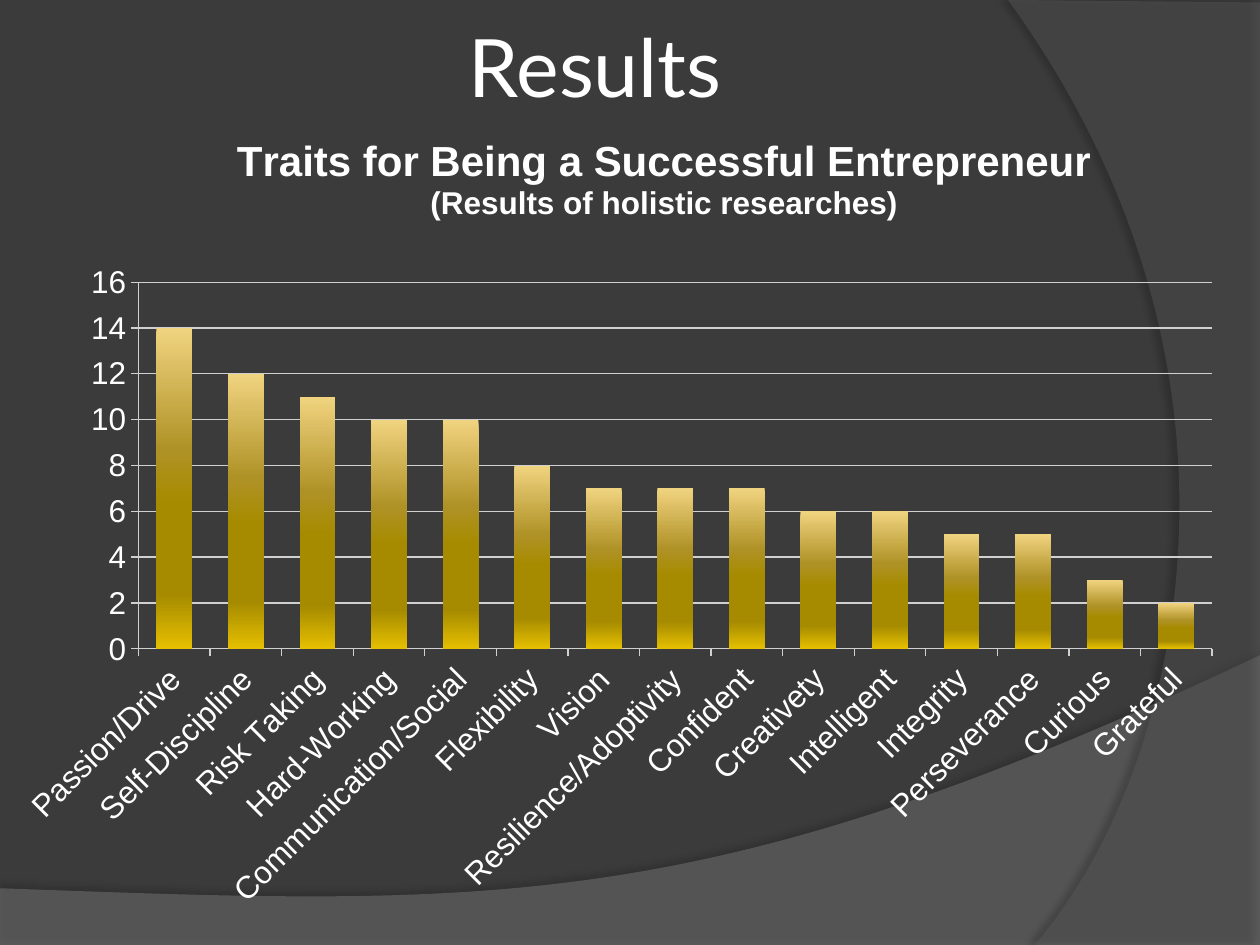
from lxml import etree
from pptx import Presentation
from pptx.chart.data import CategoryChartData
from pptx.dml.color import RGBColor
from pptx.enum.chart import XL_CHART_TYPE as ChartType, XL_TICK_MARK as Tick
from pptx.enum.text import MSO_ANCHOR as Anchor, PP_ALIGN as Align
from pptx.oxml import parse_xml
from pptx.oxml.ns import nsdecls, qn
from pptx.util import Inches, Pt

# Content
HEADING = "Results "
CHART_TITLE = [("Traits for Being a Successful Entrepreneur", 24),
               ("(Results of holistic researches)", 18)]
TRAITS = [
    ("Passion/Drive", 14), ("Self-Discipline", 12), ("Risk Taking", 11),
    ("Hard-Working", 10), ("Communication/Social", 10), ("Flexibility", 8),
    ("Vision", 7), ("Resilience/Adoptivity", 7), ("Confident", 7),
    ("Creativety", 6), ("Intelligent", 6), ("Integrity", 5),
    ("Perseverance", 5), ("Curious", 3), ("Grateful", 2),
]
COLORS = {"background": "3B3B3B", "text": "FFFFFF", "grid": "D0D0D0",
          "lower": "7F7F7F", "right": "5E5E5E", "shadow": "000000"}
BAR_STOPS = [(0, "F0D37F"), (38, "AF9226"), (54, "A68B00"),
             (83, "A68B00"), (100, "E5BF00")]

# Chart frame, and its parts in inches from the slide's corner
CHART = {"x": 0, "y": 1.04, "w": 9.81, "h": 6.29}
PLOT = {"x": 1.1, "y": 2.24, "w": 8.52, "h": 2.91}
CHART_TITLE_AT = {"x": 1.85, "y": 1.05}

# Background waves: corner points, then a curve (start, two controls, end)
WAVES = [
    {"color": "lower", "alpha": 45, "corners": [(0, 7.51), (10, 7.51)],
     "curve": [(10, 5.2), (5.59, 7.29), (3.91, 7.19), (0, 7.05)],
     "shadow": {"alpha": 35, "blur": 4, "dist": 3.5, "angle": 270}},
    {"color": "right", "alpha": 40, "corners": [(10, 0.02), (10, 7.5)],
     "curve": [(8.21, 7.5), (9.35, 6.19), (10.18, 3), (8, 0)],
     "shadow": {"alpha": 45, "blur": 4, "dist": 4, "angle": 180}},
]


def rgb(name):
    return RGBColor.from_string(COLORS[name])


def style_font(font, size, bold=False, name="Arial"):
    for key, value in {"size": Pt(size), "bold": bold, "name": name}.items():
        setattr(font, key, value)
    font.color.rgb = rgb("text")


def add_wave(slide, wave):
    start, *controls, end = wave["curve"]
    outline = [(Inches(x), Inches(y)) for x, y in wave["corners"] + [start, end]]
    builder = slide.shapes.build_freeform(*outline[0], scale=1.0)
    builder.add_line_segments(outline[1:], close=True)
    shape = builder.convert_to_shape()

    # Bend the last side into the curve
    side = list(shape._element.iter(qn("a:lnTo")))[len(outline) - 2]
    side.tag = qn("a:cubicBezTo")
    for i, (x, y) in enumerate(controls):
        point = etree.Element(qn("a:pt"), x=str(Inches(x) - shape.left),
                              y=str(Inches(y) - shape.top))
        side.insert(i, point)

    shape.line.fill.background()
    shape.fill.solid()
    shape.fill.fore_color.rgb = rgb(wave["color"])
    color = shape.fill._xPr.find(qn("a:solidFill"))[0]
    etree.SubElement(color, qn("a:alpha"), val=str(wave["alpha"] * 1000))
    shadow = wave["shadow"]
    shape._element.spPr.append(parse_xml(
        f'<a:effectLst {nsdecls("a")}><a:outerShdw blurRad="{Pt(shadow["blur"])}" '
        f'dist="{Pt(shadow["dist"])}" dir="{shadow["angle"] * 60000}" '
        f'algn="ctr" rotWithShape="0"><a:srgbClr val="{COLORS["shadow"]}">'
        f'<a:alpha val="{shadow["alpha"] * 1000}"/></a:srgbClr>'
        '</a:outerShdw></a:effectLst>'))


def set_layout(parent, index, place):
    """Place a chart part, as fractions of the chart frame."""
    for old in parent.findall(qn("c:layout")):
        parent.remove(old)
    shares = {"x": (place["x"] - CHART["x"]) / CHART["w"],
              "y": (place["y"] - CHART["y"]) / CHART["h"]}
    target = ""
    if "w" in place:
        target = '<c:layoutTarget val="inner"/>'
        shares.update({k: place[k] / CHART[k] for k in "wh"})
    modes = "".join(f'<c:{k}Mode val="edge"/>' for k in "xy")
    values = "".join(f'<c:{k} val="{v}"/>' for k, v in shares.items())
    parent.insert(index, parse_xml(
        f'<c:layout {nsdecls("c")}><c:manualLayout>{target}{modes}{values}'
        '</c:manualLayout></c:layout>'))


def add_trait_chart(slide):
    data = CategoryChartData()
    data.categories = [trait for trait, _ in TRAITS]
    data.add_series("Series 1", [count for _, count in TRAITS])
    chart = slide.shapes.add_chart(
        ChartType.COLUMN_CLUSTERED, *(Inches(CHART[k]) for k in "xywh"), data).chart
    chart.has_legend = False
    style_font(chart.font, 18)

    # Chart title
    title = chart.chart_title
    frame = title.text_frame
    for i, (text, size) in enumerate(CHART_TITLE):
        line = frame.add_paragraph() if i else frame.paragraphs[0]
        run = line.add_run()
        run.text = text
        style_font(run.font, size, bold=True)
    title.include_in_layout = False
    set_layout(title._element, 1, CHART_TITLE_AT)
    set_layout(chart._chartSpace.chart.plotArea, 0, PLOT)

    # Axes
    for axis in (chart.category_axis, chart.value_axis):
        axis.major_tick_mark = Tick.OUTSIDE
        axis.minor_tick_mark = Tick.NONE
        style_font(axis.tick_labels.font, 18)
        axis.format.line.color.rgb = rgb("grid")
    chart.category_axis._element.find(qn("c:txPr"))[0].set("rot", str(-45 * 60000))
    values = chart.value_axis
    for key, value in {"minimum_scale": 0, "maximum_scale": 16, "major_unit": 2,
                       "has_major_gridlines": True}.items():
        setattr(values, key, value)
    values.major_gridlines.format.line.color.rgb = rgb("grid")

    # Gold bars
    plot = chart.plots[0]
    plot.gap_width = 100
    plot.vary_by_categories = False
    bars = plot.series[0]
    bars.format.line.fill.background()
    stops = "".join(f'<a:gs pos="{pos * 1000}"><a:srgbClr val="{color}"/></a:gs>'
                    for pos, color in BAR_STOPS)
    bars._element.spPr.insert(0, parse_xml(
        f'<a:gradFill {nsdecls("a")}><a:gsLst>{stops}</a:gsLst>'
        '<a:lin ang="5400000" scaled="0"/></a:gradFill>'))


def add_heading(slide):
    frame = slide.shapes.add_textbox(
        Inches(0.72), Inches(0), Inches(8.17), Inches(1.04)).text_frame
    margins = {f"margin_{side}": Inches(0.05)
               for side in ("left", "top", "right", "bottom")}
    for key, value in {"word_wrap": True, "vertical_anchor": Anchor.MIDDLE,
                       **margins}.items():
        setattr(frame, key, value)
    paragraph = frame.paragraphs[0]
    paragraph.alignment = Align.CENTER
    run = paragraph.add_run()
    run.text = HEADING
    style_font(run.font, 46, name="Lato")


def main():
    prs = Presentation()
    prs.slide_width, prs.slide_height = Inches(10), Inches(7.5)
    slide = prs.slides.add_slide(prs.slide_layouts[6])
    slide.background.fill.solid()
    slide.background.fill.fore_color.rgb = rgb("background")
    for wave in WAVES:
        add_wave(slide, wave)
    add_heading(slide)
    add_trait_chart(slide)
    prs.save("out.pptx")


if __name__ == "__main__":
    main()
